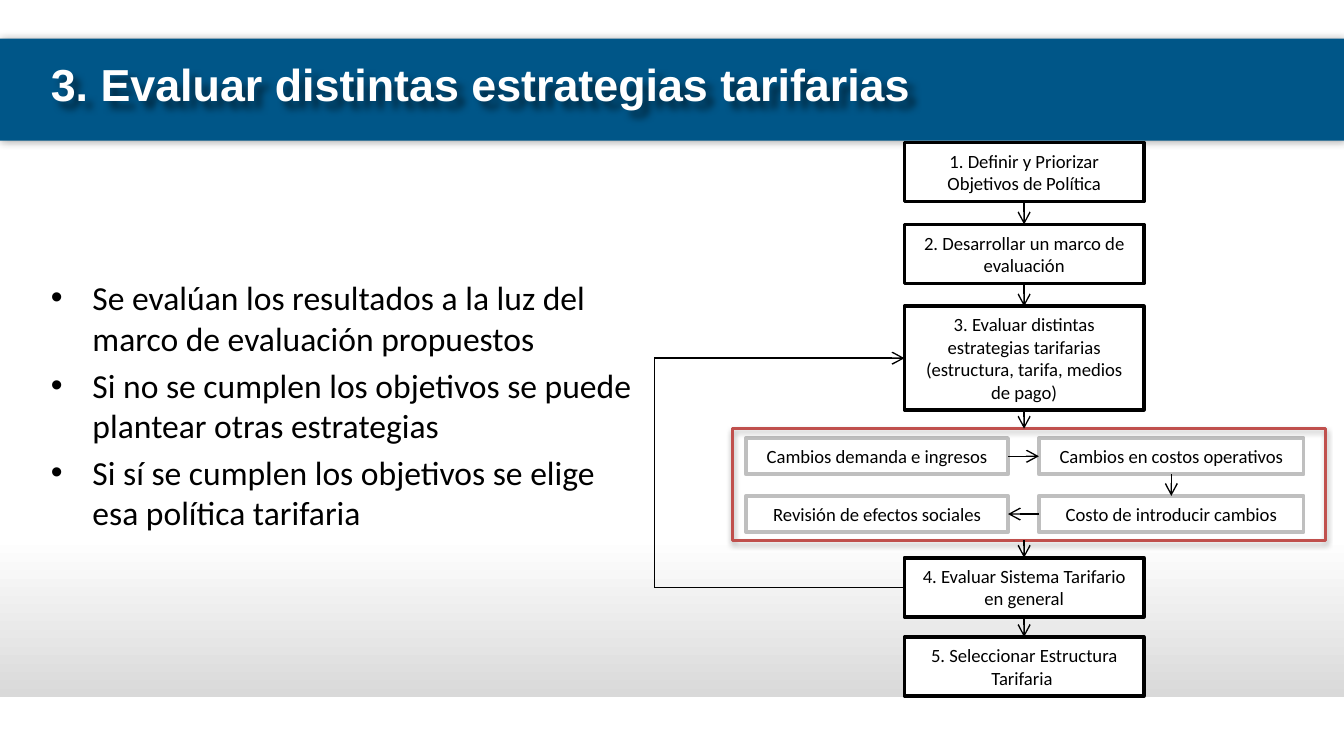
"""Build the slide on evaluating tariff strategies, with its flow chart."""
from lxml import etree
from pptx import Presentation
from pptx.dml.color import RGBColor
from pptx.enum.shapes import MSO_CONNECTOR, MSO_SHAPE
from pptx.enum.text import MSO_ANCHOR, MSO_AUTO_SIZE, PP_ALIGN
from pptx.oxml.ns import qn
from pptx.util import Inches, Pt

RECTANGLE = MSO_SHAPE.RECTANGLE
STRAIGHT = MSO_CONNECTOR.STRAIGHT
MIDDLE = MSO_ANCHOR.MIDDLE
CENTER = PP_ALIGN.CENTER
FIT_SHAPE = MSO_AUTO_SIZE.SHAPE_TO_FIT_TEXT
TOP, LEFT, BOTTOM, RIGHT = range(4)

WHITE = RGBColor(0xFF, 0xFF, 0xFF)
BLACK = RGBColor(0x00, 0x00, 0x00)
BLUE = RGBColor(0x00, 0x56, 0x88)
RED = RGBColor(0xC0, 0x50, 0x4D)
GREY = RGBColor(0xBF, 0xBF, 0xBF)
PALE_GREY = RGBColor(0xD9, 0xD9, 0xD9)

presentation = Presentation()
presentation.slide_width = Inches(10)
presentation.slide_height = presentation.slide_width * 9 // 16
slide = presentation.slides.add_slide(presentation.slide_layouts[6])
shapes = slide.shapes
COLUMN = presentation.slide_width / 100
ROW = presentation.slide_height / 56.25


def add_box(column, row, columns, rows, line_color=None, line_width=2, text=""):
    shape = shapes.add_shape(RECTANGLE, round(column * COLUMN), round(row * ROW),
                             round(columns * COLUMN), round(rows * ROW))
    shape.shadow.inherit = False
    shape.fill.solid()
    shape.fill.fore_color.rgb = WHITE
    if line_color is None:
        shape.line.fill.background()
    else:
        shape.line.color.rgb = line_color
        shape.line.width = Pt(line_width)
    if text:
        frame = shape.text_frame
        frame.word_wrap = True
        frame.auto_size = FIT_SHAPE
        frame.vertical_anchor = MIDDLE
        paragraph = frame.paragraphs[0]
        paragraph.alignment = CENTER
        run = paragraph.add_run()
        run.text = text
        run.font.name = "Calibri"
        run.font.size = Pt(10)
        run.font.color.rgb = BLACK
    return shape


def add_shadow(shape, opacity, blur, distance, degrees):
    shape.shadow.inherit = False
    effects = next(shape._element.iter(qn("a:effectLst")))
    shadow = etree.SubElement(effects, qn("a:outerShdw"), blurRad=str(Pt(blur)),
                              dist=str(Pt(distance)), dir=str(degrees * 60000),
                              algn="ctr", rotWithShape="0")
    color = etree.SubElement(shadow, qn("a:srgbClr"), val=str(BLACK))
    etree.SubElement(color, qn("a:alpha"), val=str(opacity * 1000))


footer_fade = add_box(0, 39.9, 100, 12)
footer_fade.fill.gradient()
footer_fade.fill.gradient_angle = 90
for stop, color in zip(footer_fade.fill.gradient_stops, (PALE_GREY, WHITE)):
    stop.color.rgb = color

title_band = add_box(0, 2.87, 100, 7.6)
title_band.fill.fore_color.rgb = BLUE
add_shadow(title_band, 40, 5, 0, 0)

title = shapes.add_textbox(round(2.8 * COLUMN), round(4.5 * ROW),
                           round(94.5 * COLUMN), round(5.2 * ROW))
title.text_frame.word_wrap = True
add_shadow(title, 50, 4, 5, 45)
paragraph = title.text_frame.paragraphs[0]
paragraph.line_spacing = 0.8
run = paragraph.add_run()
run.text = "3. Evaluar distintas estrategias tarifarias"
run.font.name = "Arial"
run.font.size = Pt(24)
run.font.bold = True
run.font.color.rgb = WHITE

STEPS = [
    (10.6, 4.4, "1. Definir y Priorizar Objetivos de Política"),
    (16.7, 4.4, "2. Desarrollar un marco de evaluación"),
    (22.8, 7.7, "3. Evaluar distintas estrategias tarifarias (estructura, tarifa, medios de pago)"),
    (41.5, 4.4, "4. Evaluar Sistema Tarifario en general"),
    (47.4, 4.4, "5. Seleccionar Estructura Tarifaria "),
]
define, framework, strategies, system, selection = [
    add_box(67.3, row, 17.8, rows, BLACK, text=text) for row, rows, text in STEPS]

CHECKS = [
    (55.5, 32.6, 19.5, "Cambios demanda e ingresos"),
    (77.3, 32.6, 19.7, "Cambios en costos operativos"),
    (55.5, 36.9, 19.5, "Revisión de efectos sociales"),
    (77.3, 36.9, 19.7, "Costo de introducir cambios"),
]
demand, operation, social, introduction = [
    add_box(column, row, columns, 2.7, GREY, text=text)
    for column, row, columns, text in CHECKS]

check_frame = add_box(54.5, 31.9, 44.1, 8.3, RED, 1.5)
check_frame.fill.background()
add_shadow(check_frame, 35, 3.1, 1.8, 90)

AXIS, LOOP = 76.2, 48.7
LOOP_TOP, LOOP_BOTTOM = 26.65, 43.7
LINKS = [
    ((AXIS, 15), (AXIS, 16.7), (define, BOTTOM), (framework, TOP), True),
    ((AXIS, 21.1), (AXIS, 22.8), (framework, BOTTOM), (strategies, TOP), True),
    ((AXIS, 30.5), (AXIS, 31.9), (strategies, BOTTOM), None, True),
    ((75, 33.95), (77.3, 33.95), (demand, RIGHT), (operation, LEFT), True),
    ((87.15, 35.3), (87.15, 36.9), (operation, BOTTOM), (introduction, TOP), True),
    ((77.3, 38.25), (75, 38.25), (introduction, LEFT), (social, RIGHT), True),
    ((AXIS, 40.2), (AXIS, 41.5), None, (system, TOP), True),
    ((AXIS, 45.9), (AXIS, 47.4), (system, BOTTOM), (selection, TOP), True),
    ((67.3, LOOP_BOTTOM), (LOOP, LOOP_BOTTOM), (system, LEFT), None, False),
    ((LOOP, LOOP_BOTTOM), (LOOP, LOOP_TOP), None, None, False),
    ((LOOP, LOOP_TOP), (67.3, LOOP_TOP), None, (strategies, LEFT), True),
]
for start, end, source, target, has_arrow in LINKS:
    connector = shapes.add_connector(STRAIGHT, round(start[0] * COLUMN), round(start[1] * ROW),
                                     round(end[0] * COLUMN), round(end[1] * ROW))
    if source:
        connector.begin_connect(*source)
    if target:
        connector.end_connect(*target)
    connector.line.color.rgb = BLACK
    connector.line.width = Pt(0.75)
    if has_arrow:
        etree.SubElement(connector.line._get_or_add_ln(), qn("a:tailEnd"), type="arrow")
    etree.SubElement(connector._element.spPr, qn("a:effectLst"))

BULLETS = [
    "Se evalúan los resultados a la luz del marco de evaluación propuestos",
    "Si no se cumplen los objetivos se puede plantear otras estrategias",
    "Si sí se cumplen los objetivos se elige esa política tarifaria",
]
body = shapes.add_textbox(round(2.8 * COLUMN), round(20.13 * ROW),
                          round(45.9 * COLUMN), round(20 * ROW))
frame = body.text_frame
frame.word_wrap = True
for index, text in enumerate(BULLETS):
    paragraph = frame.add_paragraph() if index else frame.paragraphs[0]
    properties = paragraph._p.get_or_add_pPr()
    properties.set("marL", str(Inches(0.31)))
    properties.set("indent", str(-Inches(0.31)))
    etree.SubElement(properties, qn("a:buFont"), typeface="Arial")
    etree.SubElement(properties, qn("a:buChar"), char="•")
    if index:
        paragraph.space_before = Pt(3.6)
    run = paragraph.add_run()
    run.text = text
    run.font.name = "Calibri"
    run.font.size = Pt(18)
    run.font.color.rgb = BLACK

presentation.save("out.pptx")
